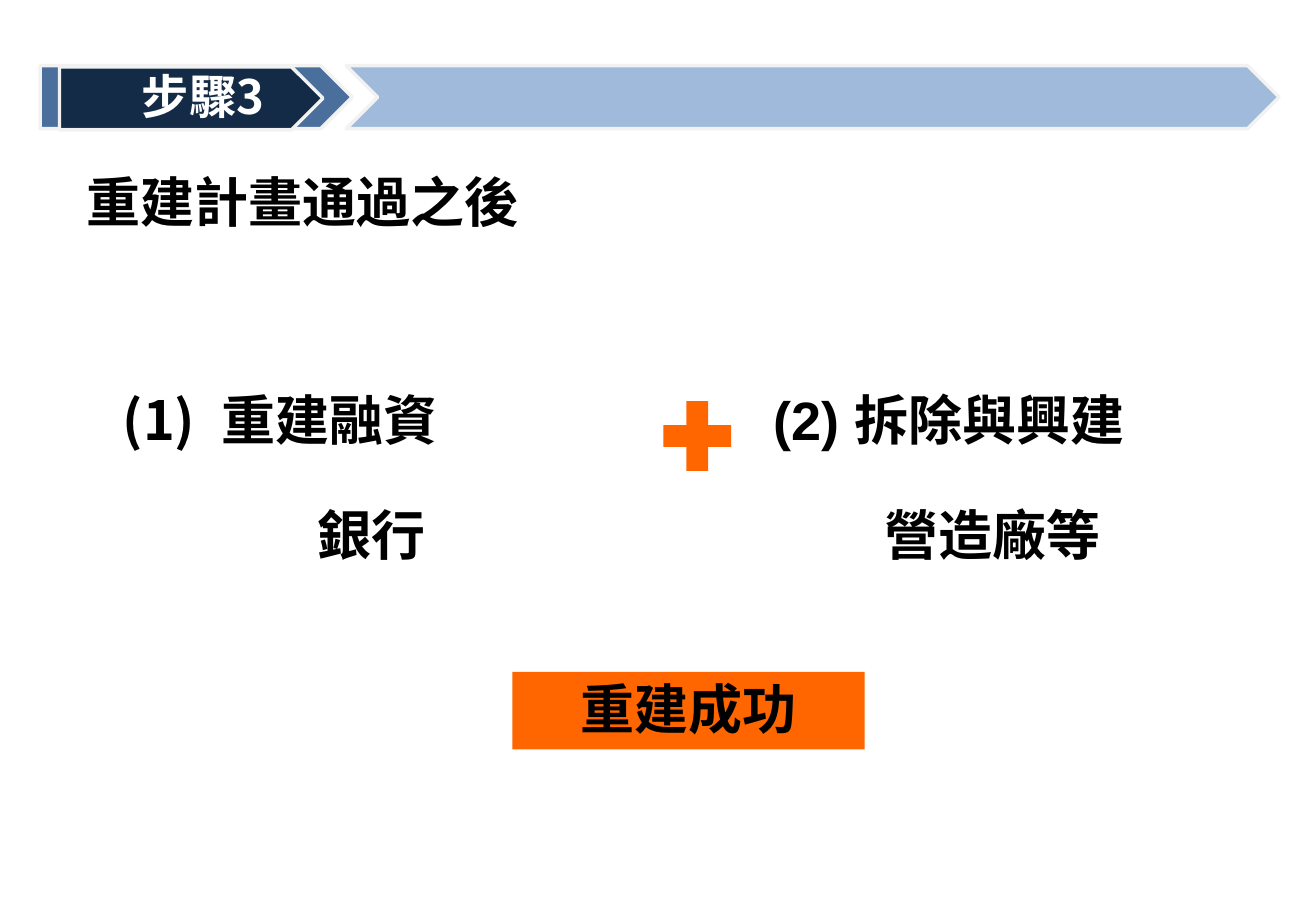
import dataclasses

import pptx
import pptx.dml.color
import pptx.enum.shapes
import pptx.enum.text
import pptx.oxml
import pptx.oxml.ns
import pptx.util

Pt = pptx.util.Pt
SHAPE = pptx.enum.shapes.MSO_SHAPE
ALIGN = pptx.enum.text.PP_ALIGN
ANCHOR = pptx.enum.text.MSO_ANCHOR
qn = pptx.oxml.ns.qn


@dataclasses.dataclass(frozen=True)
class Theme:
    steel: str = "376092"
    sky: str = "95B3D7"
    navy: str = "0F243E"
    edge: str = "F2F2F2"
    orange: str = "FF6600"
    black: str = "000000"
    white: str = "FFFFFF"
    latin: str = "Arial"
    asian: str = "Noto Sans CJK SC"
    large: int = 32
    label: int = 28
    alpha: int = 90


THEME = Theme()
INSET = {"margin_left": Pt(7.2), "margin_right": Pt(7.2),
         "margin_top": Pt(0), "margin_bottom": Pt(3.6)}
FRAME = {"word_wrap": True, "auto_size": pptx.enum.text.MSO_AUTO_SIZE.NONE,
         "vertical_anchor": ANCHOR.TOP, **INSET}
MIDDLE = {**FRAME, "vertical_anchor": ANCHOR.MIDDLE}
TIGHT = {**MIDDLE, "margin_left": Pt(0), "margin_right": Pt(0)}
LARGE = {"name": THEME.latin, "size": Pt(THEME.large), "bold": True}
LABEL = {"name": THEME.asian, "size": Pt(THEME.label), "bold": True}


def apply(item, form):
    for name, value in form.items():
        setattr(item, name, value)


def rgb(code):
    return pptx.dml.color.RGBColor.from_string(code)


def add_xml(owner, tag, **attrs):
    node = pptx.oxml.parse_xml(f"<{tag} {pptx.oxml.ns.nsdecls('a')}/>")
    for name, value in attrs.items():
        node.set(name, str(value))
    owner.append(node)
    return node


def place(item, box):
    apply(item, dict(zip(("left", "top", "width", "height"), map(Pt, box))))


def set_list(para, number):
    props = para._p.get_or_add_pPr()
    indent = Pt(58.3) if number else 0
    props.set("marL", str(indent))
    props.set("indent", str(-indent))
    if number:
        add_xml(props, "a:buFont", typeface=THEME.asian)
        add_xml(props, "a:buAutoNum", type="arabicParenBoth")
    else:
        add_xml(props, "a:buNone")


def write(item, lines, frame=FRAME, font=LARGE, color=THEME.black, gap=0):
    text = item.text_frame
    apply(text, frame)
    for index, (words, align, number) in enumerate(lines):
        para = text.add_paragraph() if index else text.paragraphs[0]
        set_list(para, number)
        apply(para, {"alignment": align, "line_spacing": 1.0,
                     "space_before": Pt(gap if index else 0),
                     "space_after": Pt(0)})
        run = para.add_run()
        run.text = words
        apply(run.font, font)
        run.font.color.rgb = rgb(color)
        add_xml(run._r.get_or_add_rPr(), "a:ea", typeface=THEME.asian)


def add_form(slide, kind, box, fill):
    item = slide.shapes.add_shape(kind, *map(Pt, box))
    item.shadow.inherit = False
    item.fill.solid()
    item.fill.fore_color.rgb = rgb(fill)
    item.line.fill.background()
    return item


def add_arrow(slide, kind, box, fill):
    item = add_form(slide, kind, box, fill)
    color = item._element.spPr.find(qn("a:solidFill")).find(qn("a:srgbClr"))
    add_xml(color, "a:alpha", val=THEME.alpha * 1000)
    item.line.color.rgb = rgb(THEME.edge)
    item.line.width = Pt(2)


def add_banner(slide):
    add_arrow(slide, SHAPE.PENTAGON, (23.8, 38.9, 185, 37.4), THEME.steel)
    add_arrow(slide, SHAPE.CHEVRON, (205.2, 38.9, 553, 37.4), THEME.sky)
    add_arrow(slide, SHAPE.PENTAGON, (35.3, 39.6, 156.2, 37.4), THEME.navy)
    label = slide.shapes.add_textbox(*map(Pt, (49, 37.4, 142.6, 42.5)))
    write(label, [("步驟3", ALIGN.CENTER, False)], TIGHT, LABEL, THEME.white)


def fill_holder(item, box, lines):
    place(item, box)
    write(item, lines, gap=30)


def main():
    deck = pptx.Presentation()
    apply(deck, {"slide_width": Pt(780), "slide_height": Pt(540)})
    slide = deck.slides.add_slide(deck.slide_layouts[3])
    title, left, right = slide.placeholders

    add_banner(slide)
    fill_holder(title, (43.9, 100, 686, 46),
                [("重建計畫通過之後", ALIGN.LEFT, False)])
    fill_holder(left, (65.5, 229, 309, 124),
                [("重建融資", ALIGN.LEFT, True), ("銀行", ALIGN.CENTER, False)])
    fill_holder(right, (451.4, 229, 273.6, 124),
                [("(2) 拆除與興建", ALIGN.LEFT, False),
                 ("營造廠等", ALIGN.CENTER, False)])

    goal = add_form(slide, SHAPE.RECTANGLE, (303.8, 398.2, 208.8, 46), THEME.orange)
    write(goal, [("重建成功", ALIGN.CENTER, False)], MIDDLE)
    add_form(slide, SHAPE.MATH_PLUS, (386, 230.4, 54.7, 56.2), THEME.orange)

    deck.save("out.pptx")


if __name__ == "__main__":
    main()
